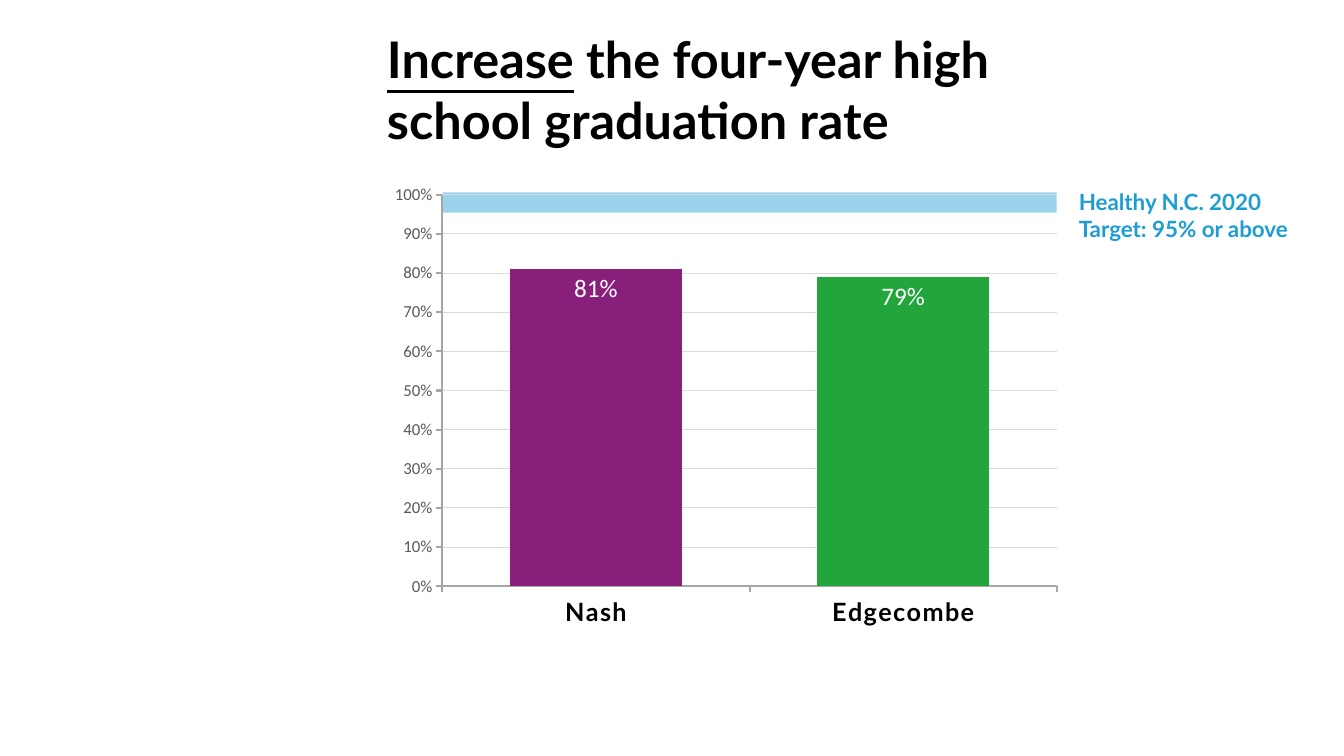
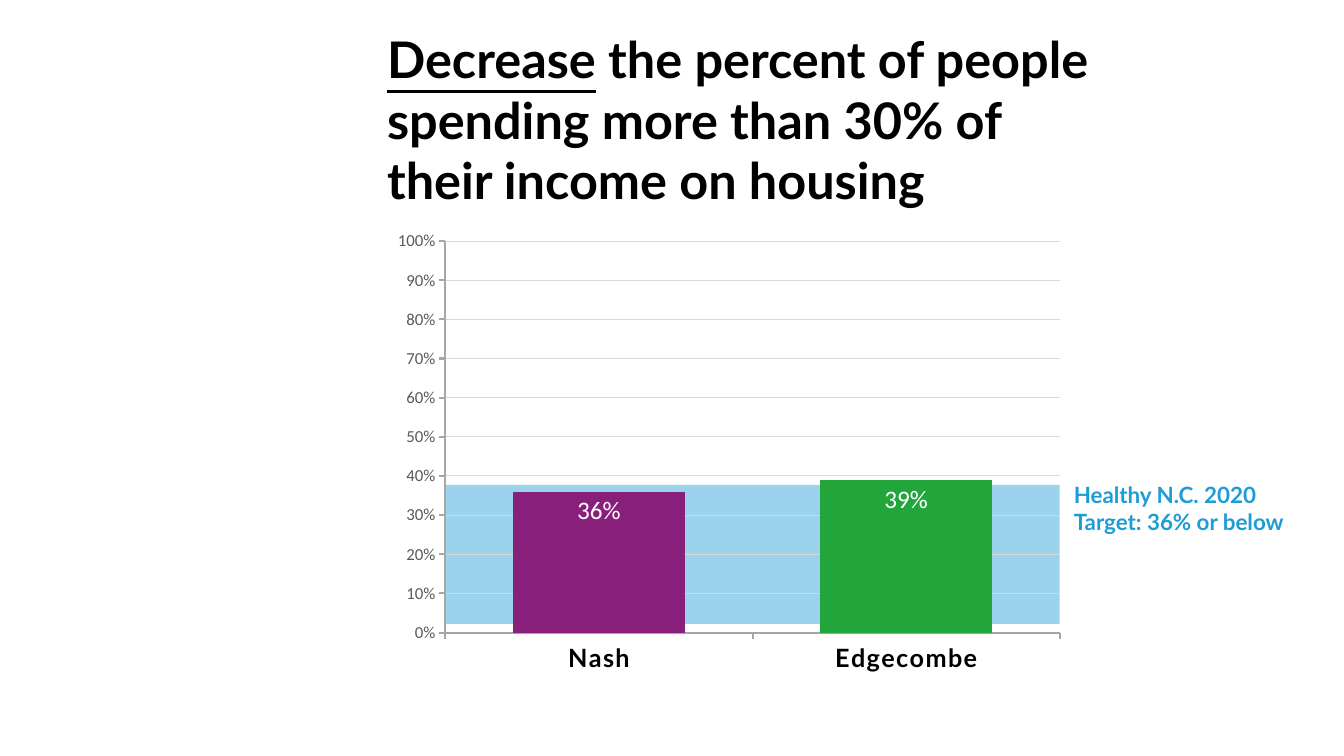
from lxml.etree import SubElement
from pptx import Presentation
from pptx.chart.data import CategoryChartData
from pptx.dml.color import RGBColor
from pptx.enum.chart import XL_CHART_TYPE, XL_LABEL_POSITION, XL_TICK_MARK
from pptx.enum.shapes import MSO_SHAPE
from pptx.enum.text import MSO_AUTO_SIZE
from pptx.oxml import parse_xml
from pptx.oxml.ns import nsdecls, qn
from pptx.util import Inches, Pt

# Shared look
BLUE, BLACK, WHITE = "1E9DD4", "000000", "FFFFFF"
AXIS, GRID, GREY = "A6A6A6", "D9D9D9", "595959"
COUNTY_COLORS = {"Nash": "881F7B", "Edgecombe": "22A53B"}
TITLE = dict(name="Lato", size=Pt(36), bold=True)
TARGET = dict(name="Lato", size=Pt(16), bold=True)
CATEGORY = dict(name="Lato", size=Pt(18), bold=True)
SCALE = dict(name="Calibri", size=Pt(12), bold=False)
VALUE = dict(name="Calibri", size=Pt(18), bold=False)

# Shared geometry, in inches
TITLE_LEFT, TITLE_TOP = 3.74, 0.23
CHART_W, CHART_H = 6.85, 4.57
BAND_INSET, BAND_W = 0.62, 6.09
NOTE_W, NOTE_H = 2.26, 0.54
PLOT = dict(x=0.09, y=0.04, w=0.89, h=0.85)  # shares of the chart

SLIDES = [
    dict(title=["Increase", " the four-year high", "school graduation rate"],
         title_size=(6.76, 1.31), chart_at=(3.77, 1.75), values=(0.81, 0.79),
         band=(1.91, 0.2), note="Healthy N.C. 2020 Target: 95% or above",
         note_at=(10.7, 1.87)),
    dict(title=["Decrease", " the percent of people", "spending more than 30% of",
                "their income on housing"],
         title_size=(7.72, 1.92), chart_at=(3.8, 2.21), values=(0.36, 0.39),
         band=(4.81, 1.38), note="Healthy N.C. 2020 Target: 36% or below",
         note_at=(10.65, 4.77)),
]


def rgb(color):
    return RGBColor.from_string(color)


def set_font(font, style, color):
    for key, value in style.items():
        setattr(font, key, value)
    font.color.rgb = rgb(color)


def add_run(p, text, style, color, underline=None):
    r = p.add_run()
    r.text = text
    set_font(r.font, style, color)
    r.font.underline = underline


def add_box(s, left, top, width, height):
    sp = s.shapes.add_textbox(*map(Inches, (left, top, width, height)))
    return sp.text_frame


def add_title(s, title, size):
    key_word, rest, *lines = title
    tf = add_box(s, TITLE_LEFT, TITLE_TOP, *size)
    tf.word_wrap = False
    tf.auto_size = MSO_AUTO_SIZE.SHAPE_TO_FIT_TEXT
    p = tf.paragraphs[0]
    add_run(p, key_word, TITLE, BLACK, True)
    add_run(p, rest, TITLE, BLACK)
    for line in lines:
        add_run(tf.add_paragraph(), line, TITLE, BLACK)


def add_note(s, text, at):
    tf = add_box(s, *at, NOTE_W, NOTE_H)
    tf.word_wrap = True
    for side in ("left", "top", "right", "bottom"):
        setattr(tf, f"margin_{side}", 0)
    add_run(tf.paragraphs[0], text, TARGET, BLUE)


def add_band(s, left, top, height):
    sp = s.shapes.add_shape(MSO_SHAPE.RECTANGLE,
                            *map(Inches, (left, top, BAND_W, height)))
    sp.shadow.inherit = False
    sp.line.fill.background()
    sp.fill.solid()
    sp.fill.fore_color.rgb = rgb(BLUE)
    clr = sp.fill._xPr.find(".//" + qn("a:srgbClr"))
    SubElement(clr, qn("a:alpha"), val="44000")


def style_axis(axis, style, color):
    axis.major_tick_mark = XL_TICK_MARK.OUTSIDE
    axis.minor_tick_mark = XL_TICK_MARK.NONE
    axis.format.line.color.rgb = rgb(AXIS)
    axis.format.line.width = Pt(1.5)
    set_font(axis.tick_labels.font, style, color)


def no_fill():
    return parse_xml(f'<c:spPr {nsdecls("c", "a")}><a:noFill/>'
                     '<a:ln><a:noFill/></a:ln></c:spPr>')


def fix_plot(chart):
    """Pin the plot's inner area and let the band show through."""
    root = chart._chartSpace
    area = root.find(".//" + qn("c:plotArea"))
    for old in area.findall(qn("c:layout")):
        area.remove(old)
    parts = "".join(f'<c:{k}Mode val="edge"/>' for k in "xy")
    parts += "".join(f'<c:{k} val="{v}"/>' for k, v in PLOT.items())
    area.insert(0, parse_xml(
        f'<c:layout {nsdecls("c")}><c:manualLayout><c:layoutTarget val="inner"/>'
        f'{parts}</c:manualLayout></c:layout>'))
    area.append(no_fill())
    root.find(qn("c:chart")).addnext(no_fill())


def add_county_chart(s, at, values):
    data = CategoryChartData(number_format="0%")
    data.categories = list(COUNTY_COLORS)
    data.add_series("Series 1", values)
    chart = s.shapes.add_chart(XL_CHART_TYPE.COLUMN_STACKED,
                               *map(Inches, (*at, CHART_W, CHART_H)), data).chart
    chart.has_title = chart.has_legend = False
    set_font(chart.font, dict(name="Calibri", size=Pt(10)), BLACK)

    # Axes
    style_axis(chart.category_axis, CATEGORY, BLACK)
    for rpr in chart.category_axis._element.iter(qn("a:defRPr")):
        rpr.set("spc", "100")
    axis = chart.value_axis
    style_axis(axis, SCALE, GREY)
    axis.minimum_scale, axis.maximum_scale, axis.major_unit = 0, 1, 0.1
    axis.tick_labels.number_format = "0%"
    axis.tick_labels.number_format_is_linked = False
    axis.has_major_gridlines = True
    axis.major_gridlines.format.line.color.rgb = rgb(GRID)
    axis.major_gridlines.format.line.width = Pt(0.75)

    # Columns and their labels
    plot = chart.plots[0]
    plot.gap_width, plot.overlap, plot.vary_by_categories = 79, 100, False
    series = plot.series[0]
    for i, color in enumerate(COUNTY_COLORS.values()):
        fill = series.points[i].format.fill
        fill.solid()
        fill.fore_color.rgb = rgb(color)
    labels = series.data_labels
    labels.show_value = True
    labels.position = XL_LABEL_POSITION.INSIDE_END
    labels.number_format, labels.number_format_is_linked = "0%", False
    set_font(labels.font, VALUE, WHITE)
    fix_plot(chart)


def main():
    prs = Presentation()
    prs.slide_width, prs.slide_height = Inches(13.33), Inches(7.5)
    for item in SLIDES:
        s = prs.slides.add_slide(prs.slide_layouts[6])
        add_band(s, item["chart_at"][0] + BAND_INSET, *item["band"])
        add_county_chart(s, item["chart_at"], item["values"])
        add_title(s, item["title"], item["title_size"])
        add_note(s, item["note"], item["note_at"])
    prs.save("out.pptx")


if __name__ == "__main__":
    main()
